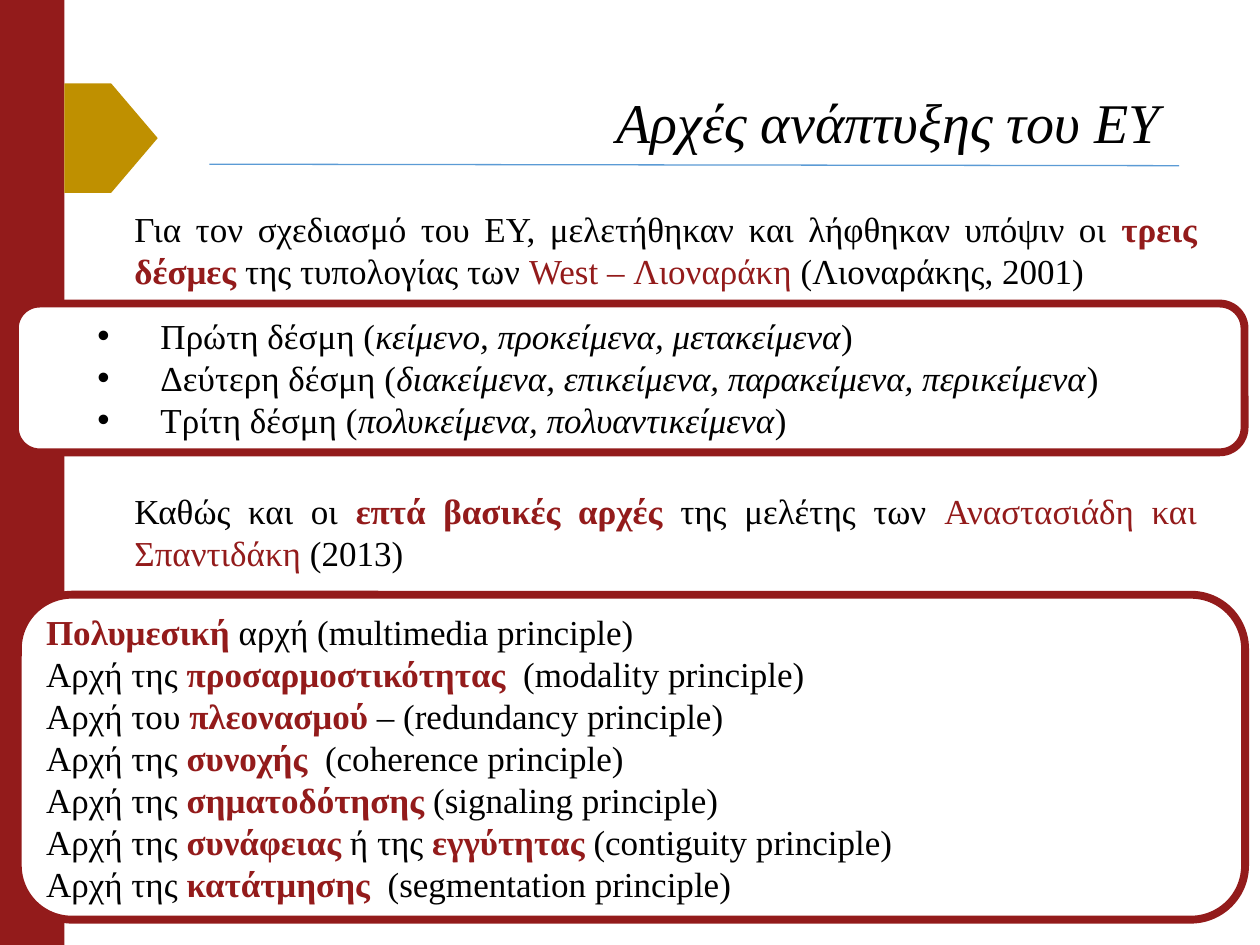
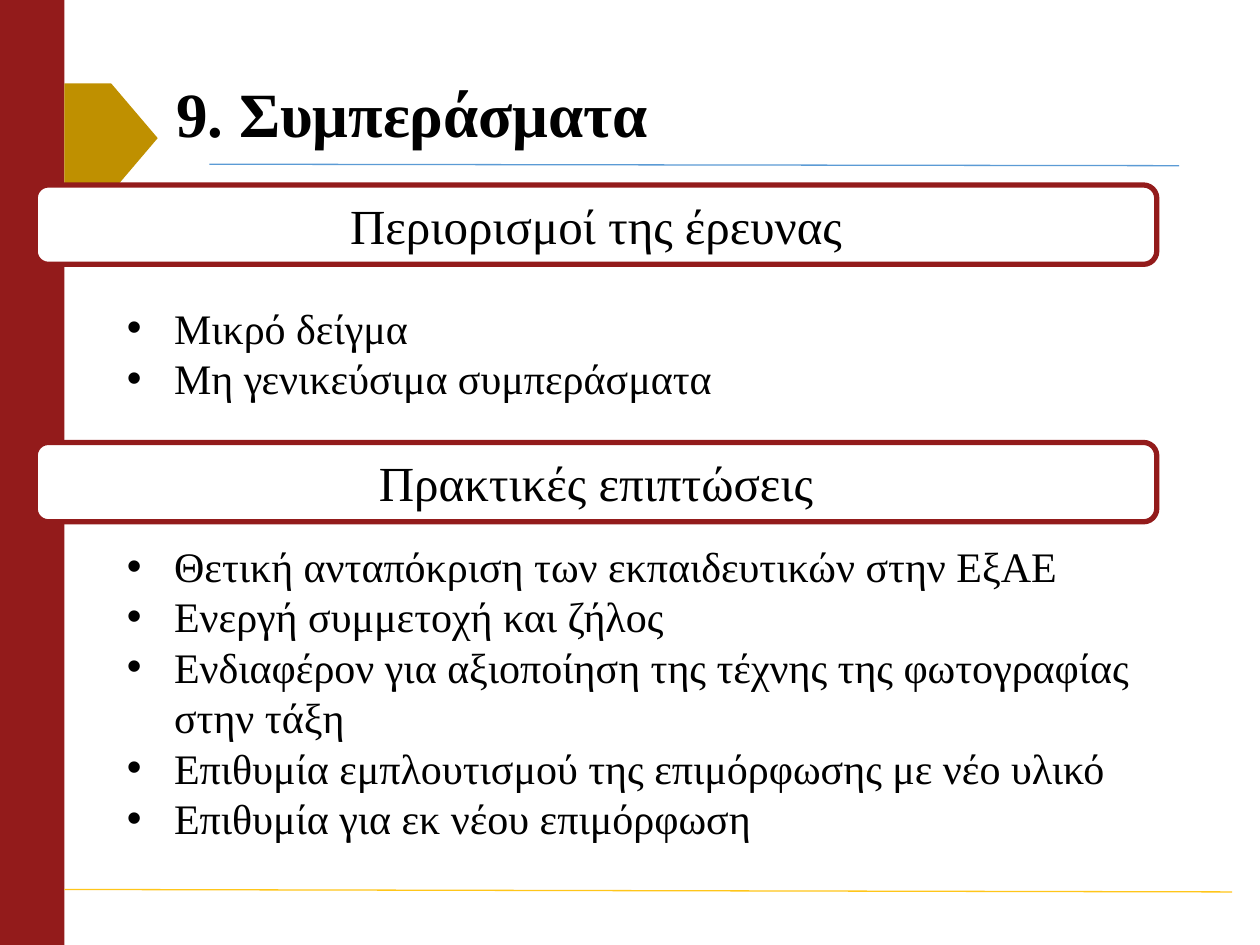
from typing import NamedTuple

from lxml.etree import SubElement
from pptx import Presentation
from pptx.dml.color import RGBColor
from pptx.enum.shapes import MSO_CONNECTOR, MSO_SHAPE
from pptx.enum.text import MSO_ANCHOR, PP_ALIGN
from pptx.oxml.ns import qn
from pptx.util import Cm, Pt

RED = RGBColor(0x93, 0x1B, 0x1B)
GOLD = RGBColor(0xBF, 0x90, 0x00)
YELLOW = RGBColor(0xFF, 0xC6, 0x1A)
BLUE = RGBColor(0x5B, 0x9B, 0xD5)
BLACK = RGBColor(0, 0, 0)
WHITE = RGBColor(0xFF, 0xFF, 0xFF)
FONT = "Times New Roman"
SLIDE_WIDTH, SLIDE_HEIGHT = 25.4, 19.05
BAND_WIDTH = 1.3


class Run(NamedTuple):
    text: str
    color: RGBColor = BLACK
    bold: bool = False
    italic: bool = False


def strong(text):
    return Run(text, RED, bold=True)


def accent(text):
    return Run(text, RED)


def italic(text):
    return Run(text, italic=True)


class Deck:
    """Holds the shared style and the slide being built; lengths are in cm."""

    def __init__(self):
        self.presentation = Presentation()
        self.presentation.slide_width = Cm(SLIDE_WIDTH)
        self.presentation.slide_height = Cm(SLIDE_HEIGHT)
        self.slide = None

    def new_slide(self):
        blank_layout = self.presentation.slide_layouts[6]
        self.slide = self.presentation.slides.add_slide(blank_layout)
        self.shape(MSO_SHAPE.RECTANGLE, (0, 0, BAND_WIDTH, SLIDE_HEIGHT), RED)
        self.line((4.22, 3.31), (23.77, 3.34), BLUE)
        self.shape(MSO_SHAPE.PENTAGON, (BAND_WIDTH, 1.68, 1.88, 2.21), GOLD)

    def shape(self, preset, box, fill):
        shape = self.slide.shapes.add_shape(preset, *map(Cm, box))
        shape.shadow.inherit = False
        shape.fill.solid()
        shape.fill.fore_color.rgb = fill
        shape.line.fill.background()
        return shape

    def line(self, start, end, color):
        connector = self.slide.shapes.add_connector(
            MSO_CONNECTOR.STRAIGHT, *map(Cm, start + end))
        connector.line.color.rgb = color
        connector.line.width = Pt(0.75)
        SubElement(connector._element.spPr, qn("a:effectLst"))

    def frame(self, box, paragraphs, size, border, **style):
        """Adds a white rounded box with a red border around its text."""
        shape = self.shape(MSO_SHAPE.ROUNDED_RECTANGLE, box, WHITE)
        shape.line.color.rgb = RED
        shape.line.width = Pt(border)
        self.fill_text(shape, paragraphs, size, MSO_ANCHOR.MIDDLE, **style)

    def text(self, box, paragraphs, size, anchor=MSO_ANCHOR.TOP, **style):
        text_box = self.slide.shapes.add_textbox(*map(Cm, box))
        self.fill_text(text_box, paragraphs, size, anchor, **style)

    def title(self, box, run, size, align=PP_ALIGN.LEFT):
        self.text(box, [[run]], size, MSO_ANCHOR.MIDDLE, align=align, spacing=0.9)

    def fill_text(self, shape, paragraphs, size, anchor, align=PP_ALIGN.LEFT,
                  spacing=1.0, bullet=None):
        """Fills a shape; bullet is the text margin and the hanging depth."""
        text_frame = shape.text_frame
        text_frame.word_wrap = True
        text_frame.vertical_anchor = anchor
        for index, runs in enumerate(paragraphs):
            paragraph = text_frame.add_paragraph() if index else text_frame.paragraphs[0]
            paragraph.alignment = align
            paragraph.line_spacing = spacing
            if bullet:
                self.add_bullet(paragraph, *bullet)
            for part in runs:
                run = paragraph.add_run()
                run.text = part.text
                run.font.name = FONT
                run.font.size = Pt(size)
                run.font.color.rgb = part.color
                run.font.bold = part.bold
                run.font.italic = part.italic

    @staticmethod
    def add_bullet(paragraph, margin, hanging):
        properties = paragraph._p.get_or_add_pPr()
        properties.set("marL", str(Cm(margin)))
        properties.set("indent", str(-Cm(hanging)))
        SubElement(properties, qn("a:buFont"), typeface="Arial")
        SubElement(properties, qn("a:buChar"), char="•")


def build_principles(deck):
    deck.new_slide()
    bundles = [
        ("Πρώτη", "κείμενο, προκείμενα, μετακείμενα"),
        ("Δεύτερη", "διακείμενα, επικείμενα, παρακείμενα, περικείμενα"),
        ("Τρίτη", "πολυκείμενα, πολυαντικείμενα"),
    ]
    deck.frame((0.3, 6.12, 24.79, 3),
               [[Run(f"{order} δέσμη ("), italic(texts), Run(")")]
                for order, texts in bundles],
               20, 4.5, bullet=(2.54, 1.27))
    deck.title((3.18, 1.02, 20.47, 3), italic("Αρχές ανάπτυξης του ΕΥ"), 32,
               PP_ALIGN.RIGHT)

    introductions = [
        (4.06, [Run("Για τον σχεδιασμό του ΕΥ, μελετήθηκαν και λήφθηκαν υπόψιν οι "),
                strong("τρεις δέσμες "), Run("της τυπολογίας των "),
                accent("West – Λιοναράκη "), Run("(Λιοναράκης, 2001)")]),
        (9.75, [Run("Καθώς και οι "), strong("επτά βασικές αρχές"),
                Run(" της μελέτης των "), accent("Αναστασιάδη και Σπαντιδάκη"),
                Run(" (2013)")]),
    ]
    for top, runs in introductions:
        deck.text((2.46, top, 21.92, 1.96), [runs], 20, align=PP_ALIGN.JUSTIFY)

    principles = [
        [strong("Πολυμεσική"), Run(" αρχή (multimedia principle)")],
        [Run("Αρχή της "), strong("προσαρμοστικότητας"), Run("  (modality principle)")],
        [Run("Αρχή του "), strong("πλεονασμού"), Run(" – (redundancy principle)")],
        [Run("Αρχή της "), strong("συνοχής"), Run("  (coherence principle)")],
        [Run("Αρχή της "), strong("σηματοδότησης"), Run(" (signaling principle)")],
        [Run("Αρχή της "), strong("συνάφειας"), Run(" ή της "), strong("εγγύτητας"),
         Run(" (contiguity principle)")],
        [Run("Αρχή της "), strong("κατάτμησης"), Run("  (segmentation principle)")],
    ]
    deck.frame((0.36, 11.99, 24.74, 6.55), principles, 20, 4.5)


def build_conclusions(deck):
    deck.new_slide()
    deck.line((BAND_WIDTH, 17.93), (24.84, 17.98), YELLOW)
    deck.title((3.3, 1.57, 21.59, 1.6), Run("9. Συμπεράσματα", bold=True), 36)
    sections = [
        ("Περιορισμοί της έρευνας", 3.73, 5.97, 2.31, [
            "Μικρό δείγμα",
            "Μη γενικεύσιμα συμπεράσματα",
        ]),
        ("Πρακτικές επιπτώσεις", 8.92, 10.77, 6.4, [
            "Θετική ανταπόκριση των εκπαιδευτικών στην ΕξΑΕ",
            "Ενεργή συμμετοχή και ζήλος",
            "Ενδιαφέρον για αξιοποίηση της τέχνης της φωτογραφίας στην τάξη",
            "Επιθυμία εμπλουτισμού της επιμόρφωσης με νέο υλικό",
            "Επιθυμία για εκ νέου επιμόρφωση",
        ]),
    ]
    for heading, heading_top, list_top, list_height, points in sections:
        deck.frame((0.71, heading_top, 22.61, 1.6), [[Run(heading)]], 28, 3,
                   align=PP_ALIGN.CENTER)
        deck.text((2.31, list_top, 21.4, list_height),
                  [[Run(point)] for point in points], 24, bullet=(0.95, 0.95))


def main():
    deck = Deck()
    build_principles(deck)
    build_conclusions(deck)
    deck.presentation.save("out.pptx")


if __name__ == "__main__":
    main()
